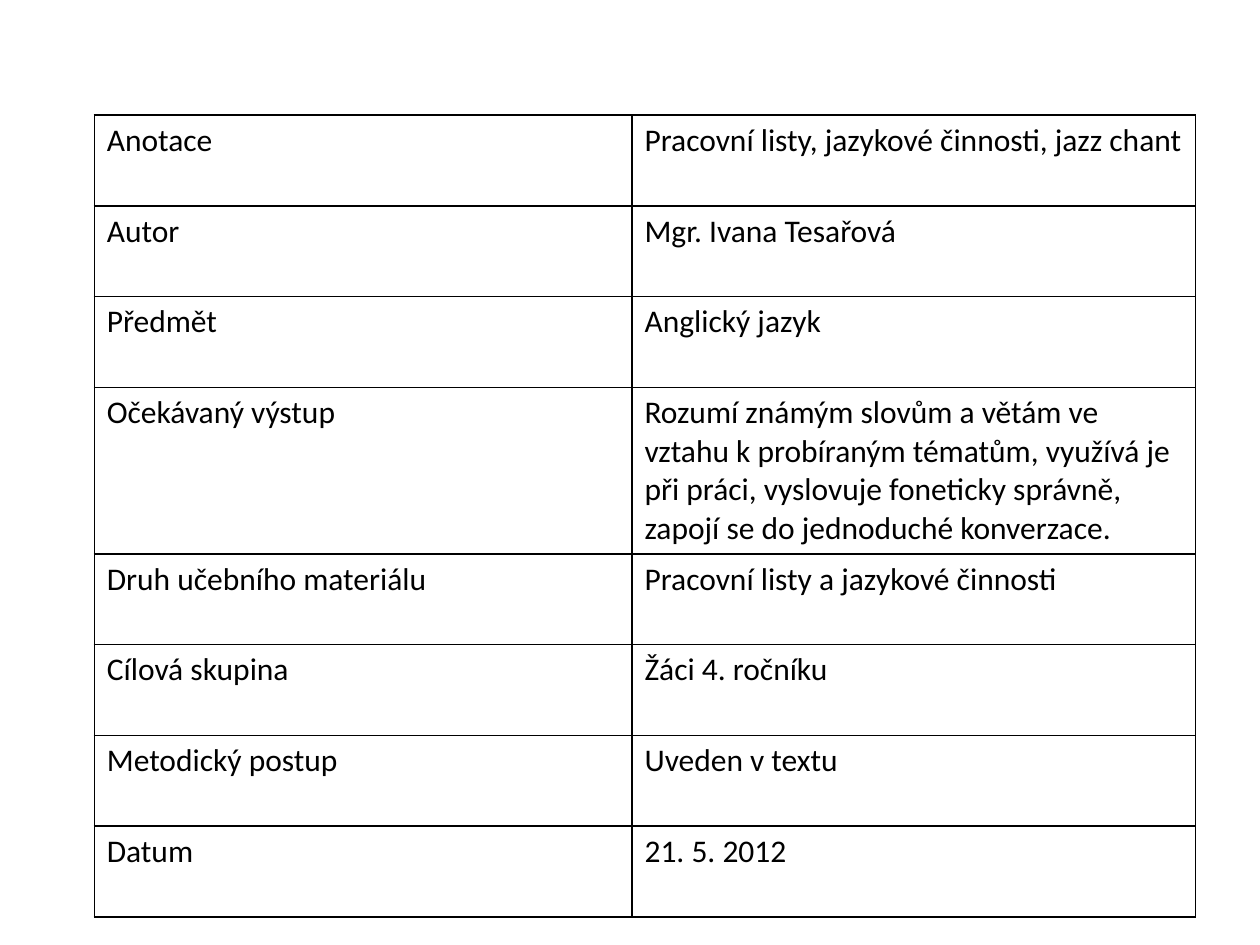
"""Build a slide with a table that describes a teaching material."""
from lxml.etree import SubElement as Sub
from pptx import Presentation
from pptx.dml.color import RGBColor
from pptx.oxml.ns import qn
from pptx.util import Cm, Pt

BLACK = RGBColor(0, 0, 0)
ROWS = [
    ("Anotace", "Pracovní listy, jazykové činnosti, jazz chant"),
    ("Autor", "Mgr. Ivana Tesařová"),
    ("Předmět", "Anglický jazyk"),
    ("Očekávaný výstup",
     "Rozumí známým slovům a větám ve vztahu k probíraným tématům, "
     "využívá je při práci, vyslovuje foneticky správně, "
     "zapojí se do jednoduché konverzace."),
    ("Druh učebního materiálu", "Pracovní listy a jazykové činnosti"),
    ("Cílová skupina", "Žáci 4. ročníku"),
    ("Metodický postup", "Uveden v textu"),
    ("Datum", "21. 5. 2012"),
]
COLS = [10.84, 11.36]
LEFT, TOP, HIGH, STEP = 1.9, 2.32, 16.08, 1.83
FONT = {"name": "Calibri", "size": Pt(18), "bold": False}
PLAIN = {"first_row": False, "horz_banding": False}


def apply(item, look):
    """Set each attribute named in look."""
    for key, val in look.items():
        setattr(item, key, val)


def frame(cell):
    """Draw a thin black line on all four sides of a cell."""
    props = cell._tc.get_or_add_tcPr()
    for side in ("lnL", "lnR", "lnT", "lnB"):
        line = Sub(props, qn(f"a:{side}"), w=str(Pt(1)))
        fill = Sub(line, qn("a:solidFill"))
        Sub(fill, qn("a:srgbClr"), val=str(BLACK))


def write(cell, text):
    """Put styled text in a cell without fill."""
    frame(cell)
    cell.fill.background()
    cell.text = text
    font = cell.text_frame.paragraphs[0].runs[0].font
    apply(font, FONT)
    font.color.rgb = BLACK


def main():
    """Build and save the slide."""
    deck = Presentation()
    apply(deck, {"slide_width": Cm(25.4), "slide_height": Cm(19.05)})
    slide = deck.slides.add_slide(deck.slide_layouts[6])
    shape = slide.shapes.add_table(
        len(ROWS), len(COLS), Cm(LEFT), Cm(TOP), Cm(sum(COLS)), Cm(HIGH))
    table = shape.table
    apply(table, PLAIN)
    for col, wide in zip(table.columns, COLS):
        col.width = Cm(wide)
    for row, texts in zip(table.rows, ROWS):
        row.height = Cm(STEP)
        for cell, text in zip(row.cells, texts):
            write(cell, text)
    shape.height = Cm(HIGH)
    deck.save("out.pptx")


if __name__ == "__main__":
    main()
